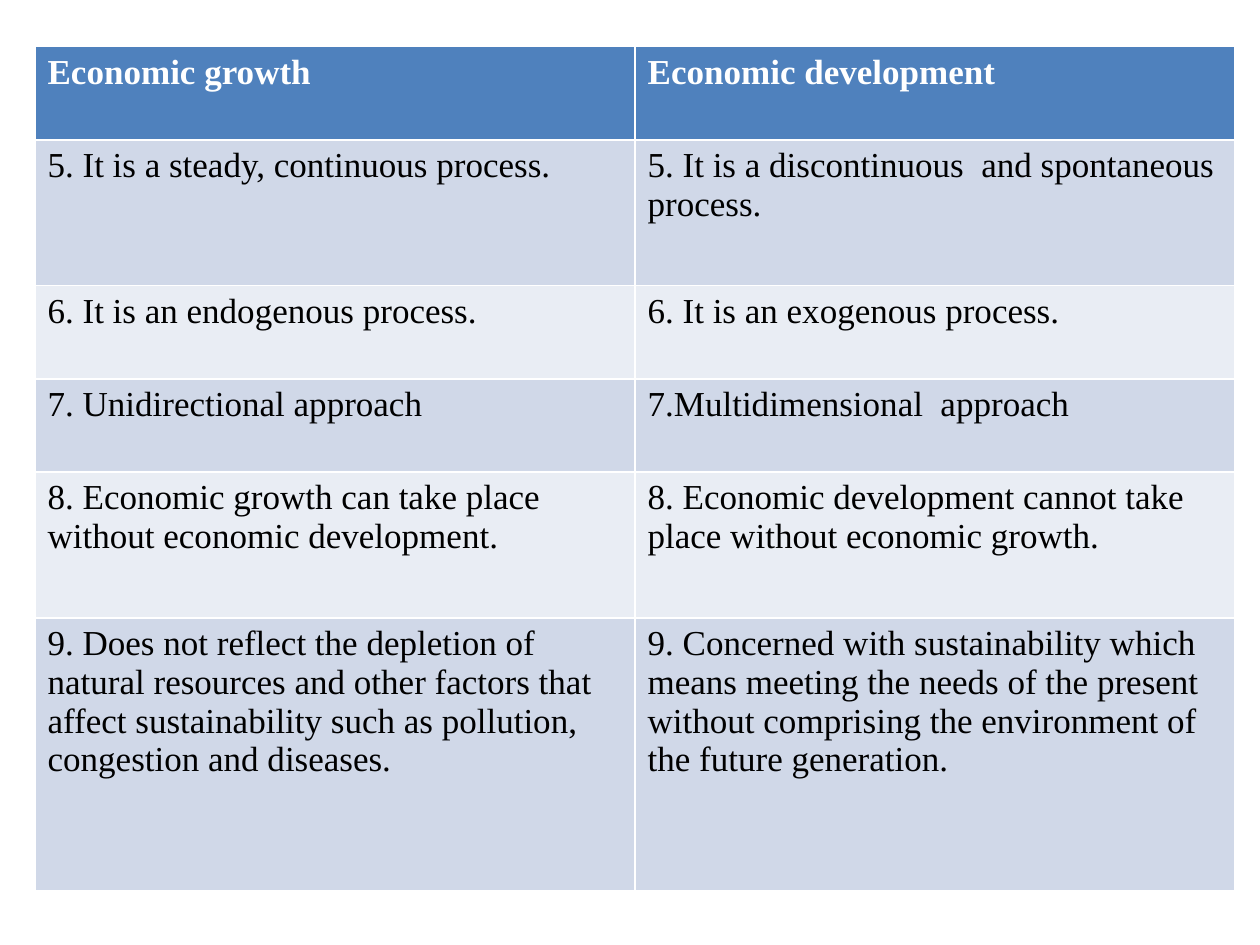
"""Build a slide with a table comparing economic growth and economic development."""

from dataclasses import dataclass

import pptx
import pptx.dml.color
import pptx.table
import pptx.util

COLORS = {
    "header": "4F81BD",
    "odd_band": "D0D8E8",
    "even_band": "E9EDF4",
    "header_text": "FFFFFF",
    "body_text": "000000",
}
FONT_NAME = "Times New Roman"
FONT_SIZE = 20
TABLE_LEFT, TABLE_TOP = 20, 26.6
COLUMN_WIDTH = 342.9


@dataclass(frozen=True)
class ComparisonRow:
    growth: str
    development: str
    height: float


ROWS = [
    ComparisonRow("Economic growth", "Economic development", 53.3),
    ComparisonRow(
        "5. It is a steady, continuous process.",
        "5. It is a discontinuous  and spontaneous process.",
        83.3,
    ),
    ComparisonRow(
        "6. It is an endogenous process.", "6. It is an exogenous process.", 53.3
    ),
    ComparisonRow("7. Unidirectional approach", "7.Multidimensional  approach", 53.3),
    ComparisonRow(
        "8. Economic growth can take place without economic development.",
        "8. Economic development cannot take place without economic growth.",
        83.3,
    ),
    ComparisonRow(
        "9. Does not reflect the depletion of natural resources and other factors "
        "that affect sustainability such as pollution, congestion and diseases.",
        "9. Concerned with sustainability which means meeting the needs of the "
        "present without comprising the environment of the future generation.",
        156,
    ),
]


def color(name: str) -> pptx.dml.color.RGBColor:
    return pptx.dml.color.RGBColor.from_string(COLORS[name])


def fill_cell(cell: pptx.table._Cell, text: str, row_index: int) -> None:
    is_header = row_index == 0
    band = "odd_band" if row_index % 2 else "even_band"
    cell.fill.solid()
    cell.fill.fore_color.rgb = color("header" if is_header else band)
    cell.text = text
    font = cell.text_frame.paragraphs[0].font
    font.name = FONT_NAME
    font.size = pptx.util.Pt(FONT_SIZE)
    font.bold = is_header
    font.color.rgb = color("header_text" if is_header else "body_text")


def add_comparison(slide: pptx.slide.Slide, rows: list[ComparisonRow]) -> None:
    frame = slide.shapes.add_table(
        len(rows),
        2,
        pptx.util.Pt(TABLE_LEFT),
        pptx.util.Pt(TABLE_TOP),
        pptx.util.Pt(2 * COLUMN_WIDTH),
        pptx.util.Pt(sum(row.height for row in rows)),
    )
    table = frame.table
    for column in table.columns:
        column.width = pptx.util.Pt(COLUMN_WIDTH)
    for row_index, row in enumerate(rows):
        table.rows[row_index].height = pptx.util.Pt(row.height)
        for column_index, text in enumerate((row.growth, row.development)):
            fill_cell(table.cell(row_index, column_index), text, row_index)


def main() -> None:
    deck = pptx.Presentation()
    deck.slide_width = pptx.util.Pt(720)
    deck.slide_height = pptx.util.Pt(540)
    slide = deck.slides.add_slide(deck.slide_layouts[6])
    add_comparison(slide, ROWS)
    deck.save("out.pptx")


if __name__ == "__main__":
    main()
